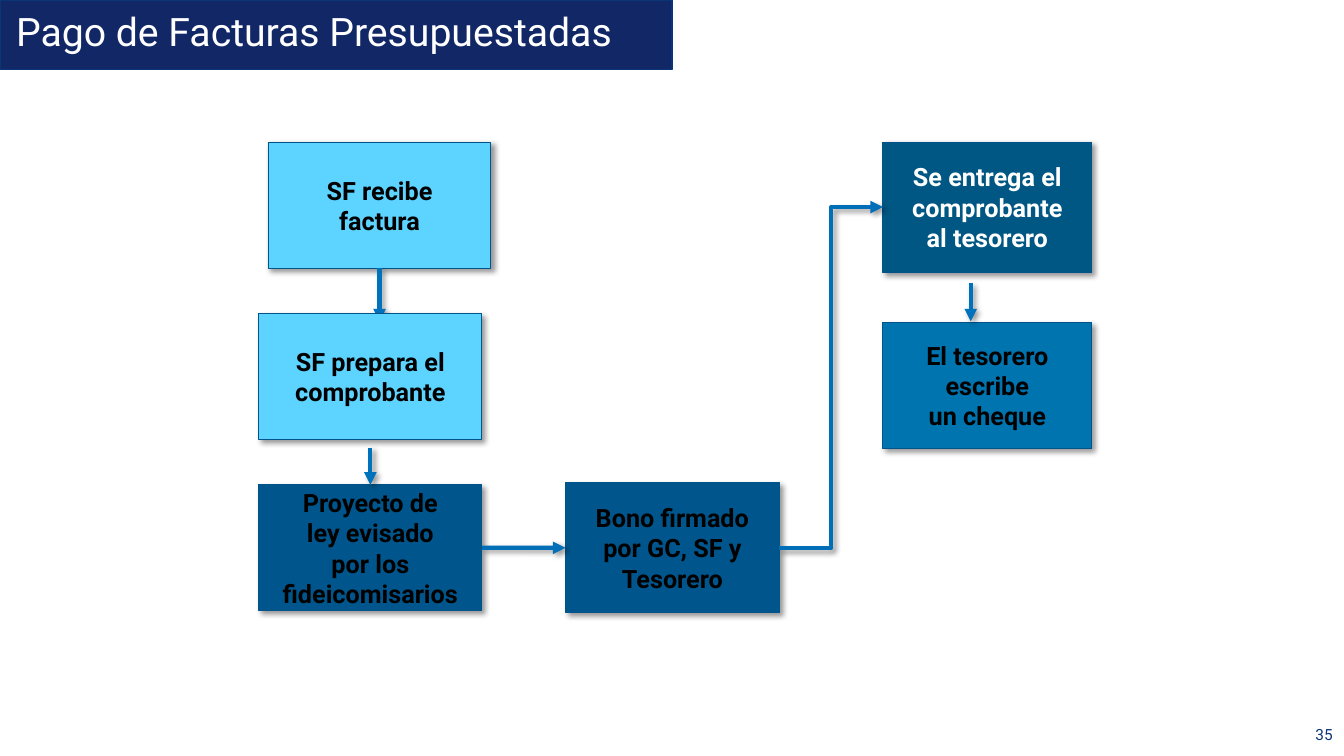
from dataclasses import dataclass

import pptx
import pptx.dml.color
import pptx.enum.shapes
import pptx.enum.text
import pptx.oxml
import pptx.oxml.ns
import pptx.util

ALIGN = pptx.enum.text.PP_ALIGN
ANCHOR = pptx.enum.text.MSO_ANCHOR
SHAPE = pptx.enum.shapes.MSO_SHAPE
CONNECTOR = pptx.enum.shapes.MSO_CONNECTOR
TOP, LEFT, BOTTOM, RIGHT = range(4)

SLIDE_WIDTH = pptx.util.Inches(13.33)
SLIDE_HEIGHT = pptx.util.Inches(7.5)


@dataclass(frozen=True)
class Theme:
    font: str = "Roboto"
    title_size: int = 28
    step_size: int = 18
    number_size: int = 11
    banner: str = "112766"
    navy: str = "0A3678"
    white: str = "FFFFFF"
    black: str = "000000"
    sky: str = "5DD4FF"
    deep: str = "00568C"
    teal: str = "005783"
    blue: str = "0074AF"
    outline: str = "005489"
    arrow: str = "0072BC"
    elbow: str = "006FB8"


THEME = Theme()


def across(percent):
    return round(SLIDE_WIDTH * percent / 100)


def down(percent):
    return round(SLIDE_HEIGHT * percent / 100)


def area(left, top, width, height):
    """Turn percentages of the slide into a position and size."""
    return across(left), down(top), across(width), down(height)


def rgb(color):
    return pptx.dml.color.RGBColor.from_string(color)


def add_shadow(shape):
    """Give a shape or connector a soft shadow to the lower right."""
    shape._element.spPr.append(pptx.oxml.parse_xml(
        f'<a:effectLst {pptx.oxml.ns.nsdecls("a")}>'
        '<a:outerShdw blurRad="50800" dist="38100" dir="2700000" algn="tl" rotWithShape="0">'
        f'<a:srgbClr val="{THEME.black}"><a:alpha val="40000"/></a:srgbClr>'
        '</a:outerShdw></a:effectLst>'))


def write(frame, text, size, color, align, bold=False):
    frame.text = text
    for para in frame.paragraphs:
        para.alignment = align
        para.font.name = THEME.font
        para.font.size = pptx.util.Pt(size)
        para.font.bold = bold
        para.font.color.rgb = rgb(color)


def add_block(page, kind, place, fill, outline, width):
    block = page.shapes.add_shape(kind, *area(*place))
    block.fill.solid()
    block.fill.fore_color.rgb = rgb(fill)
    block.line.color.rgb = rgb(outline)
    block.line.width = pptx.util.Pt(width)
    return block


def add_step(page, text, place, fill, color=THEME.black):
    step = add_block(page, SHAPE.FLOWCHART_PROCESS, place, fill, THEME.outline, 0.75)
    add_shadow(step)
    frame = step.text_frame
    frame.word_wrap = False
    frame.vertical_anchor = ANCHOR.MIDDLE
    write(frame, text, THEME.step_size, color, ALIGN.CENTER, bold=True)
    return step


def add_arrow(page, start=(0, 0), end=(0, 0), source=None, target=None,
              kind=CONNECTOR.STRAIGHT, color=THEME.arrow):
    """Draw an arrow between points, or from and to a (step, side) pair."""
    arrow = page.shapes.add_connector(
        kind, across(start[0]), down(start[1]), across(end[0]), down(end[1]))
    if source:
        arrow.begin_connect(*source)
    if target:
        arrow.end_connect(*target)
    arrow.line.color.rgb = rgb(color)
    arrow.line.width = pptx.util.Pt(3)
    arrow.line._get_or_add_ln().append(pptx.oxml.parse_xml(
        f'<a:tailEnd {pptx.oxml.ns.nsdecls("a")} type="triangle"/>'))
    add_shadow(arrow)


def add_title(page, text):
    banner = add_block(page, SHAPE.RECTANGLE, (0, 0, 50, 9.2), THEME.banner, THEME.navy, 1)
    banner.shadow.inherit = False
    frame = page.shapes.add_textbox(*area(0, 0.4, 53.3, 7.7)).text_frame
    frame.word_wrap = True
    frame.margin_left = frame.margin_right = pptx.util.Inches(0.16)
    frame.margin_top = pptx.util.Inches(0.1)
    write(frame, text, THEME.title_size, THEME.white, ALIGN.LEFT)
    frame.paragraphs[0].line_spacing = 0.9


def add_page_number(page, number):
    frame = page.shapes.add_textbox(*area(96.4, 94.5, 3.5, 5.3)).text_frame
    frame.word_wrap = True
    frame.vertical_anchor = ANCHOR.MIDDLE
    write(frame, number, THEME.number_size, THEME.navy, ALIGN.RIGHT)


def add_flow(page):
    received = add_step(page, "SF recibe\nfactura", (19.95, 18.8, 16.58, 16.67), THEME.sky)
    add_arrow(page, end=(28.24, 42.53), source=(received, BOTTOM))
    add_step(page, "SF prepara el\ncomprobante", (19.27, 41.47, 16.58, 16.67), THEME.sky)
    reviewed = add_step(page, "Proyecto de\nley evisado\npor los\nfideicomisarios",
                        (19.27, 64.13, 16.58, 16.67), THEME.deep)
    signed = add_step(page, "Bono firmado\npor GC, SF y\nTesorero",
                      (42.08, 63.87, 15.9, 17.2), THEME.deep)
    delivered = add_step(page, "Se entrega el\ncomprobante\nal tesorero",
                         (65.7, 18.8, 15.53, 17.2), THEME.teal, THEME.white)
    add_step(page, "El tesorero\nescribe\nun cheque", (65.7, 42.67, 15.53, 16.67), THEME.blue)

    add_arrow(page, start=(27.56, 59.2), target=(reviewed, TOP))
    add_arrow(page, start=(72.23, 37.47), end=(72.23, 42.53))
    add_arrow(page, source=(reviewed, RIGHT), target=(signed, LEFT), color=THEME.elbow)
    add_arrow(page, start=(57.98, 72.47), end=(65.7, 27.4), source=(signed, RIGHT),
              target=(delivered, LEFT), kind=CONNECTOR.ELBOW, color=THEME.elbow)


def main():
    deck = pptx.Presentation()
    deck.slide_width, deck.slide_height = SLIDE_WIDTH, SLIDE_HEIGHT
    page = deck.slides.add_slide(deck.slide_layouts[6])
    add_title(page, "Pago de Facturas Presupuestadas")
    add_page_number(page, "35")
    add_flow(page)
    deck.save("out.pptx")


if __name__ == "__main__":
    main()
